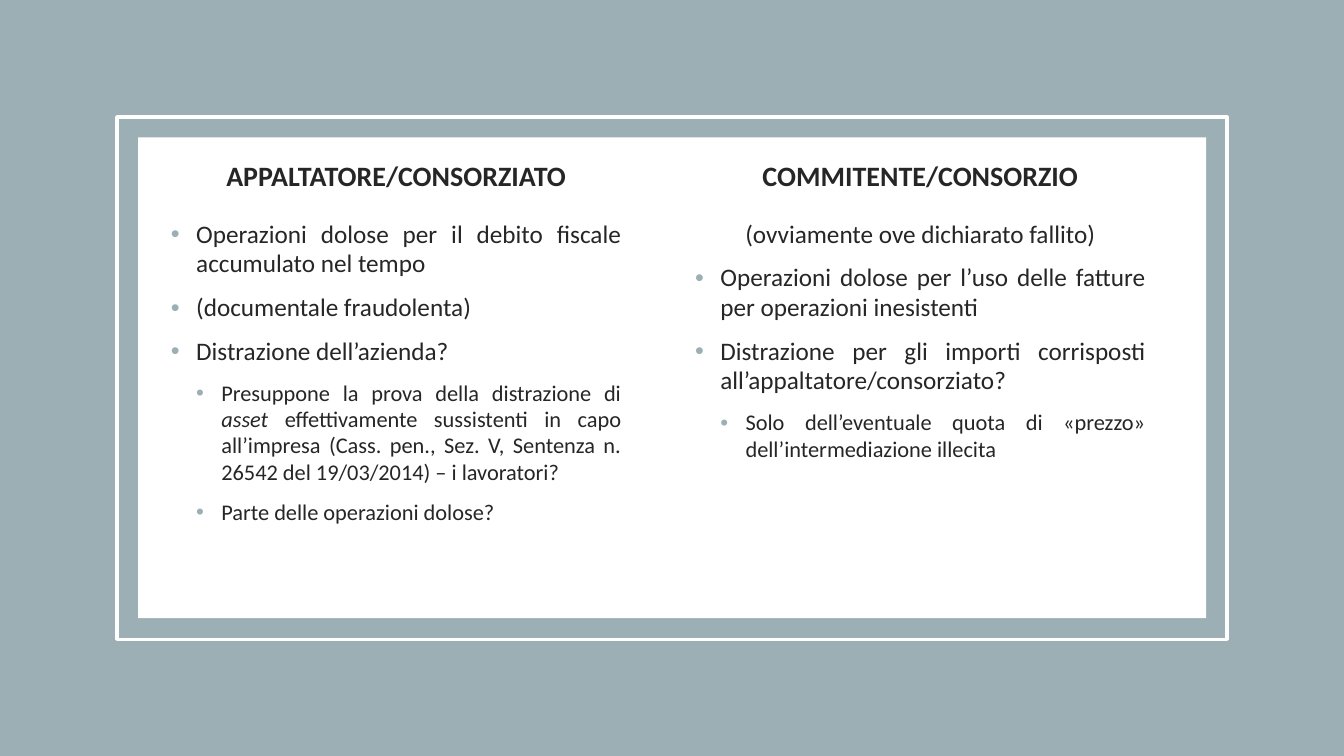
from lxml import etree
from pptx import Presentation
from pptx import util as u
from pptx.dml.color import RGBColor
from pptx.enum import shapes, text
from pptx.oxml import ns

SAGE = RGBColor(0x9B, 0xAF, 0xB5)
WHITE = RGBColor(0xFF, 0xFF, 0xFF)
INK = RGBColor(0x26, 0x26, 0x26)
FONT = "Calibri"
CENTER = text.PP_ALIGN.CENTER
JUSTIFY = text.PP_ALIGN.JUSTIFY

LEFT_COLUMN, RIGHT_COLUMN = 4.06, 17.27
COLUMN_WIDTH = 11.85
HEADING_TOP, HEADING_HEIGHT = 3.91, 1.96
BODY_TOP, BODY_HEIGHT = 5.41, 9.73
INDENT = 0.635


def add_rectangle(slide, left, top, width, height, fill=None, line=None):
    shape = slide.shapes.add_shape(
        shapes.MSO_SHAPE.RECTANGLE, u.Cm(left), u.Cm(top), u.Cm(width), u.Cm(height)
    )
    shape.shadow.inherit = False
    if fill is None:
        shape.fill.background()
    else:
        shape.fill.solid()
        shape.fill.fore_color.rgb = fill
    if line is None:
        shape.line.fill.background()
    else:
        shape.line.color.rgb = line
        shape.line.width = u.Pt(2.5)


def add_text_frame(slide, left, top, height):
    box = slide.shapes.add_textbox(
        u.Cm(left), u.Cm(top), u.Cm(COLUMN_WIDTH), u.Cm(height)
    )
    box.text_frame.word_wrap = True
    return box.text_frame


def set_bullet(paragraph, level):
    paragraph.level = level
    properties = paragraph._p.get_or_add_pPr()
    properties.set("marL", str(u.Cm(INDENT * (level + 1))))
    properties.set("indent", str(u.Cm(-INDENT)))
    color = etree.SubElement(properties, ns.qn("a:buClr"))
    etree.SubElement(color, ns.qn("a:srgbClr"), val=str(SAGE))
    etree.SubElement(properties, ns.qn("a:buFont"), typeface="Arial")
    etree.SubElement(properties, ns.qn("a:buChar"), char="•")


def write(frame, content, size=18, bold=False, italic="", align=JUSTIFY, level=None):
    paragraph = frame.paragraphs[0]
    if paragraph.runs:
        paragraph = frame.add_paragraph()
    paragraph.alignment = align
    paragraph.line_spacing = 0.98
    paragraph.space_before = u.Pt(10)
    if level is not None:
        set_bullet(paragraph, level)
    for part in content.partition(italic) if italic else (content,):
        run = paragraph.add_run()
        run.text = part
        run.font.name = FONT
        run.font.size = u.Pt(size)
        run.font.bold = bold
        run.font.italic = bool(italic) and part == italic
        run.font.color.rgb = INK


def add_heading(slide, left, content):
    frame = add_text_frame(slide, left, HEADING_TOP, HEADING_HEIGHT)
    write(frame, content, size=20, bold=True, align=CENTER)


def main():
    presentation = Presentation()
    presentation.slide_width = u.Cm(33.87)
    presentation.slide_height = u.Cm(19.05)
    slide = presentation.slides.add_slide(presentation.slide_layouts[6])

    add_rectangle(slide, 0, 0, 33.87, 19.05, fill=SAGE)
    add_rectangle(slide, 3.48, 3.46, 26.92, 12.12, fill=WHITE)
    add_rectangle(slide, 2.95, 2.95, 27.97, 13.16, line=WHITE)

    add_heading(slide, LEFT_COLUMN, "APPALTATORE/CONSORZIATO")
    contractor = add_text_frame(slide, LEFT_COLUMN, BODY_TOP, BODY_HEIGHT)
    for content in (
        "Operazioni dolose per il debito fiscale accumulato nel tempo",
        "(documentale fraudolenta)",
        "Distrazione dell’azienda?",
    ):
        write(contractor, content, level=0)
    write(
        contractor,
        "Presuppone la prova della distrazione di asset effettivamente sussistenti "
        "in capo all’impresa (Cass. pen., Sez. V, Sentenza n. 26542 del 19/03/2014) "
        "– i lavoratori?",
        size=16,
        italic="asset",
        level=1,
    )
    write(contractor, "Parte delle operazioni dolose?", size=16, level=1)

    add_heading(slide, RIGHT_COLUMN, "COMMITENTE/CONSORZIO")
    client = add_text_frame(slide, RIGHT_COLUMN, BODY_TOP, BODY_HEIGHT)
    write(client, "(ovviamente ove dichiarato fallito)", align=CENTER)
    for content in (
        "Operazioni dolose per l’uso delle fatture per operazioni inesistenti",
        "Distrazione per gli importi corrisposti all’appaltatore/consorziato?",
    ):
        write(client, content, level=0)
    write(
        client,
        "Solo dell’eventuale quota di «prezzo» dell’intermediazione illecita",
        size=16,
        level=1,
    )

    presentation.save("out.pptx")


if __name__ == "__main__":
    main()
